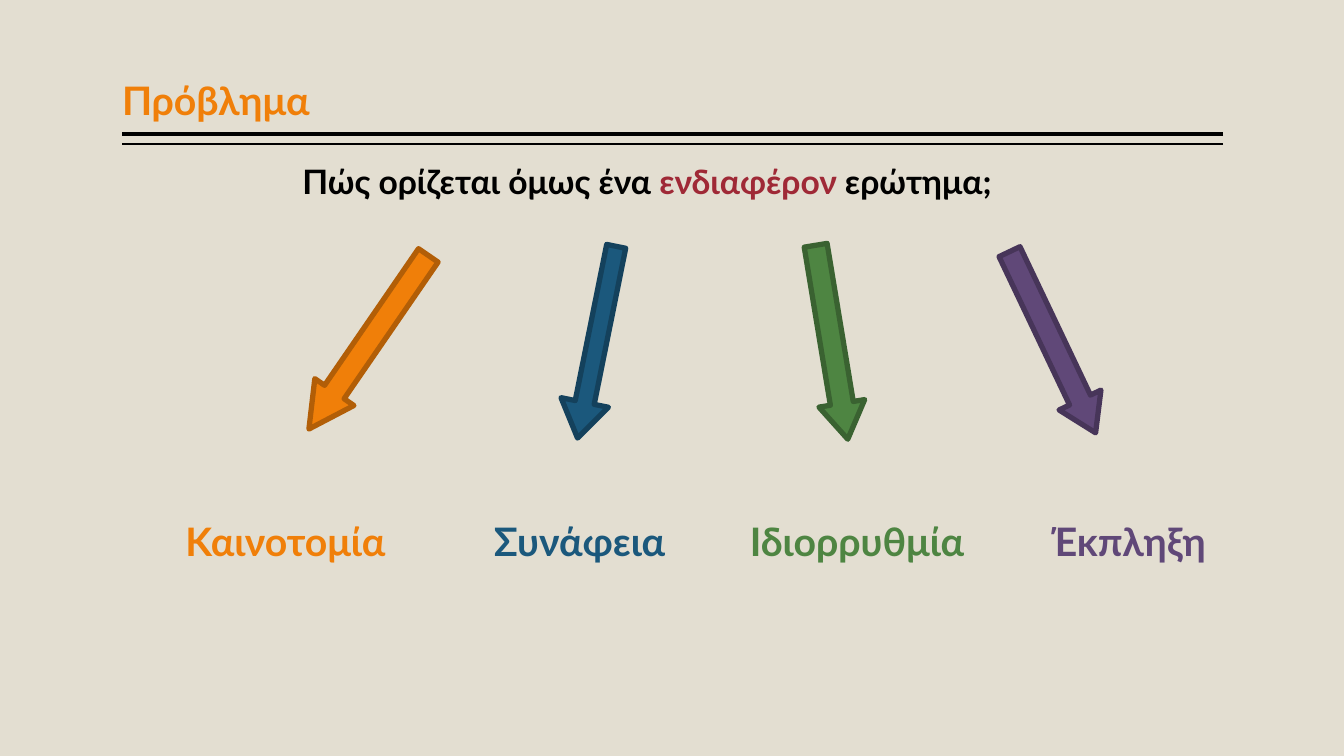
from lxml.etree import SubElement
from pptx import Presentation
from pptx.dml.color import RGBColor
from pptx.enum.shapes import MSO_CONNECTOR, MSO_SHAPE
from pptx.enum.text import MSO_ANCHOR, MSO_AUTO_SIZE, PP_ALIGN
from pptx.oxml.ns import qn
from pptx.util import Inches, Pt

WIDTH, HEIGHT = Inches(13.33), Inches(7.5)
FONT = "Lato"

SAND = RGBColor(0xE3, 0xDE, 0xD1)
BLACK = RGBColor(0x00, 0x00, 0x00)
RED = RGBColor(0x9F, 0x29, 0x36)
ORANGE = RGBColor(0xF0, 0x7F, 0x09)
DARK_ORANGE = RGBColor(0xB2, 0x5E, 0x07)
BLUE = RGBColor(0x1B, 0x58, 0x7C)
DARK_BLUE = RGBColor(0x14, 0x41, 0x5C)
GREEN = RGBColor(0x4E, 0x85, 0x42)
DARK_GREEN = RGBColor(0x3A, 0x62, 0x31)
PURPLE = RGBColor(0x60, 0x48, 0x78)
DARK_PURPLE = RGBColor(0x47, 0x35, 0x59)

# Percent of the slide's width (x) or height (y)
MARGIN, RIGHT = 9.08, 91
ARROW_MIDDLE = 45.27
LABEL_TOP, LABEL_HEIGHT = 67.73, 7.6

# text, label left, label width, colour, edge colour
QUALITIES = [
    ("Καινοτομία", 13.05, 17.93, ORANGE, DARK_ORANGE),
    ("Συνάφεια", 36.01, 17.93, BLUE, DARK_BLUE),
    ("Ιδιορρυθμία", 55.06, 18.98, GREEN, DARK_GREEN),
    ("Έκπληξη", 77.49, 18.98, PURPLE, DARK_PURPLE),
]
# left, width, height, rotation, shaft share, head ratio
ARROWS = [
    (25.66, 3.53, 27.87, 34.5, 0.5, 0.946),
    (42.61, 3.6, 25.87, 11.4, 0.4, 0.75),
    (60.16, 3.45, 26, 350.6, 0.5, 0.783),
    (76.59, 3.45, 26.53, 334.6, 0.5, 0.783),
]


def x(percent):
    return round(WIDTH * percent / 100)


def y(percent):
    return round(HEIGHT * percent / 100)


def add_run(p, text, size, color):
    r = p.add_run()
    r.text = text
    r.font.name, r.font.size, r.font.bold = FONT, Pt(size), True
    r.font.color.rgb = color


def fill_placeholder(sp, box, anchor, size, runs):
    """Move a placeholder to box and write its single, unbulleted line."""
    left, top, width, height = box
    sp.left, sp.top, sp.width, sp.height = x(left), y(top), x(width), y(height)
    tf = sp.text_frame
    tf.word_wrap, tf.auto_size = True, MSO_AUTO_SIZE.NONE
    tf.vertical_anchor = anchor
    tf.margin_left = tf.margin_right = 0
    tf.margin_top = tf.margin_bottom = Inches(0.05)
    p = tf.paragraphs[0]
    p.alignment, p.line_spacing = PP_ALIGN.LEFT, 0.9
    for text, color in runs:
        add_run(p, text, size, color)
    return p


def remove_bullet(p):
    pPr = p._p.get_or_add_pPr()
    pPr.set("marL", "0")
    pPr.set("indent", "0")
    SubElement(pPr, qn("a:buNone"))


def add_rule(s, top, weight):
    line = s.shapes.add_connector(
        MSO_CONNECTOR.STRAIGHT, x(RIGHT), y(top), x(MARGIN), y(top))
    line.line.color.rgb, line.line.width = BLACK, Pt(weight)
    SubElement(line._element.spPr, qn("a:effectLst"))


def add_arrow(s, geometry, color, edge):
    left, width, height, rotation, shaft, head = geometry
    sp = s.shapes.add_shape(
        MSO_SHAPE.DOWN_ARROW, x(left), y(ARROW_MIDDLE - height / 2),
        x(width), y(height))
    sp.rotation = rotation
    sp.adjustments[0], sp.adjustments[1] = shaft, head
    sp.shadow.inherit = False
    sp.fill.solid()
    sp.fill.fore_color.rgb = color
    sp.line.color.rgb, sp.line.width = edge, Pt(3.78)


def add_label(s, text, left, width, color):
    sp = s.shapes.add_textbox(
        x(left), y(LABEL_TOP), x(width), y(LABEL_HEIGHT))
    tf = sp.text_frame
    tf.word_wrap, tf.auto_size = True, MSO_AUTO_SIZE.SHAPE_TO_FIT_TEXT
    add_run(tf.paragraphs[0], text, 28, color)


def main():
    prs = Presentation()
    prs.slide_width, prs.slide_height = WIDTH, HEIGHT
    s = prs.slides.add_slide(prs.slide_layouts[1])
    s.background.fill.solid()
    s.background.fill.fore_color.rgb = SAND

    add_rule(s, 17.73, 3)
    add_rule(s, 19.07, 1)
    fill_placeholder(s.shapes.title, (MARGIN, 1.07, RIGHT - MARGIN, 16),
                     MSO_ANCHOR.BOTTOM, 28, [("Πρόβλημα", ORANGE)])
    question = fill_placeholder(
        s.placeholders[1], (22.5, 21.2, 53.56, 12.4), MSO_ANCHOR.TOP, 24,
        [("Πώς ορίζεται όμως ένα ", BLACK), ("ενδιαφέρον", RED),
         (" ερώτημα;", BLACK)])
    question.space_before = Pt(18)
    remove_bullet(question)

    for (text, left, width, color, edge), geometry in zip(QUALITIES, ARROWS):
        add_arrow(s, geometry, color, edge)
        add_label(s, text, left, width, color)
    prs.save("out.pptx")


if __name__ == "__main__":
    main()
